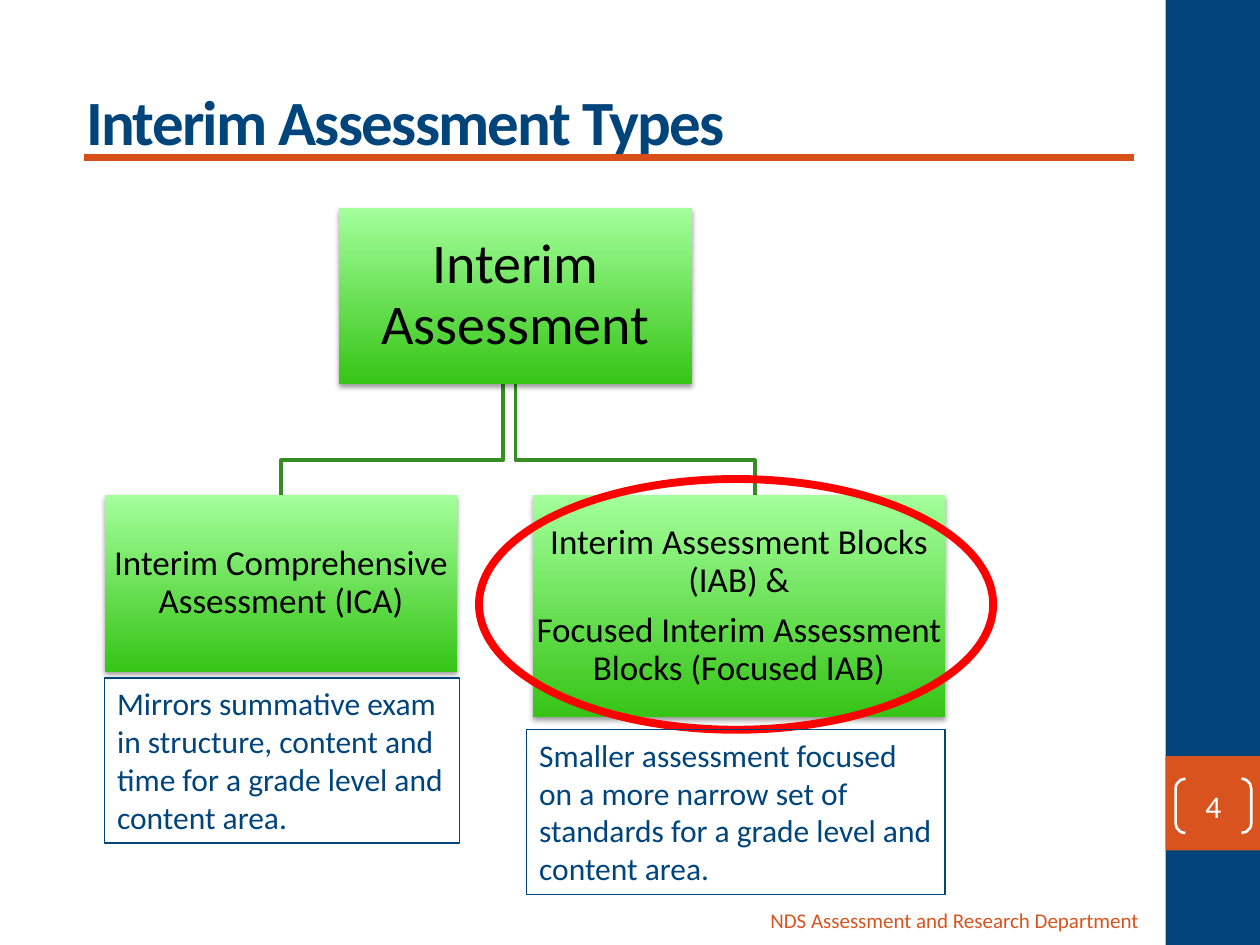
import pptx
import pptx.util
import pptx.dml.color
import pptx.oxml
import pptx.oxml.ns
import pptx.enum.shapes
import pptx.enum.text

Pt = pptx.util.Pt
SHAPE = pptx.enum.shapes.MSO_SHAPE
ALIGN = pptx.enum.text.PP_ALIGN
ANCHOR = pptx.enum.text.MSO_ANCHOR
NAVY, ORANGE, RED, WHITE, BLACK = "00447C", "D9531E", "FF0000", "FFFFFF", "000000"
GREEN_DARK, GREEN_LIGHT, GREEN_LINE = "36C416", "A3FF9B", "368D22"


def rgb(value):
    """Return the colour for a hex string."""
    return pptx.dml.color.RGBColor.from_string(value)


def set_attrs(obj, values):
    """Set each attribute named in a dict of format values."""
    for name, value in values.items():
        setattr(obj, name, value)


def set_line(sp, color, width):
    """Give a shape or connector a solid line."""
    sp.line.color.rgb = rgb(color)
    sp.line.width = Pt(width)


def set_text(sp, lines, size, color, align=ALIGN.LEFT, anchor=ANCHOR.TOP, inset=None, bold=False, para=None):
    """Write paragraphs into a shape and format them."""
    tf = sp.text_frame
    set_attrs(tf, {"word_wrap": True, "vertical_anchor": anchor})
    if inset is not None:
        set_attrs(tf, {f"margin_{side}": Pt(inset) for side in ("left", "top", "right", "bottom")})
    tf.text = "\n".join(lines)
    for p in tf.paragraphs:
        set_attrs(p, {"alignment": align, **(para or {})})
        for r in p.runs:
            set_attrs(r.font, {"name": "Calibri", "size": Pt(size), "bold": bold})
            r.font.color.rgb = rgb(color)


def add_shape(s, kind, box, fill=None):
    """Add a preset shape with a plain fill or none, and no line or shadow."""
    sp = s.shapes.add_shape(kind, *map(Pt, box))
    sp.shadow.inherit = False
    sp.line.fill.background()
    if fill:
        sp.fill.solid()
        sp.fill.fore_color.rgb = rgb(fill)
    else:
        sp.fill.background()
    return sp


def add_sidebar(s, box, number):
    """Draw the side band with its bracketed page number."""
    x, y, w, h = box
    tile_y = y + 0.8 * h
    bracket_w, bracket_h = 0.8 * w, 31
    add_shape(s, SHAPE.RECTANGLE, box, NAVY)
    add_shape(s, SHAPE.RECTANGLE, (x, tile_y, w, w), ORANGE)
    sp = add_shape(s, SHAPE.DOUBLE_BRACKET, (x + 5.8, tile_y + 13, bracket_w, bracket_h))
    sp.adjustments[0] = 0.18
    set_line(sp, WHITE, 1.5)
    set_text(sp, [number], 18, WHITE, ALIGN.CENTER, ANCHOR.MIDDLE, 0)


def add_title(s, box, text):
    """Place the title and the rule beneath it."""
    x, y, w, h = box
    sp = s.shapes.title
    set_attrs(sp, dict(zip(("left", "top", "width", "height"), map(Pt, box))))
    set_text(sp, [text], 36, NAVY, anchor=ANCHOR.BOTTOM, bold=True)
    sp.text_frame.paragraphs[0].runs[0].font._element.set("spc", "-100")
    rule_x, rule_y, rule_w = x + 6, y + h - 4, 600
    rule = s.shapes.add_connector(
        pptx.enum.shapes.MSO_CONNECTOR.STRAIGHT, Pt(rule_x), Pt(rule_y), Pt(rule_x + rule_w), Pt(rule_y))
    set_line(rule, "D94F19", 4.5)
    rule._element.spPr.append(pptx.oxml.parse_xml(f'<a:effectLst {pptx.oxml.ns.nsdecls("a")}/>'))


def add_footer(s, box, text):
    """Place the department name at the bottom right."""
    sp = s.shapes.add_textbox(*map(Pt, box))
    set_text(sp, [text], 12, ORANGE, ALIGN.RIGHT, ANCHOR.MIDDLE)


def add_branch(s, start_x, end_x, top, bend, bottom):
    """Draw an elbow line from the parent box to a child box."""
    builder = s.shapes.build_freeform(Pt(start_x), Pt(top))
    points = [(start_x, bend), (end_x, bend), (end_x, bottom)]
    builder.add_line_segments([(Pt(x), Pt(y)) for x, y in points], close=False)
    sp = builder.convert_to_shape()
    sp.shadow.inherit = False
    sp.fill.background()
    set_line(sp, GREEN_LINE, 2)


def add_node(s, box, lines, size):
    """Draw a green gradient box with a soft shadow and centred text."""
    sp = add_shape(s, SHAPE.RECTANGLE, box)
    sp.fill.gradient()
    sp.fill.gradient_angle = 90
    for stop, color in zip(sp.fill.gradient_stops, (GREEN_DARK, GREEN_LIGHT)):
        stop.color.rgb = rgb(color)
    effects = sp._element.spPr.find(pptx.oxml.ns.qn("a:effectLst"))
    effects.append(pptx.oxml.parse_xml(
        f'<a:outerShdw {pptx.oxml.ns.nsdecls("a")} blurRad="{Pt(3.1)}" dist="{Pt(1.6)}" dir="5400000" '
        'rotWithShape="0"><a:srgbClr val="000000"><a:alpha val="38000"/></a:srgbClr></a:outerShdw>'))
    set_text(sp, lines, size, BLACK, ALIGN.CENTER, ANCHOR.MIDDLE, 1,
             para={"line_spacing": 0.9, "space_after": Pt(0.35 * size)})


def add_note(s, box, text):
    """Draw an outlined description box."""
    sp = add_shape(s, SHAPE.RECTANGLE, box)
    set_line(sp, NAVY, 0.75)
    set_text(sp, [text], 18, NAVY)


def add_tree(s, box):
    """Draw the assessment hierarchy with its descriptions and highlight."""
    x, y, w, h = box
    node_w, node_h, note_h = 201.6, 100.8, 94.3
    right_w, right_h = 235.4, 126.7
    right_x, root_x = x + w - right_w, x + 134
    root_bottom, child_y = y + node_h, y + 164.2
    bend = child_y - 20
    root_mid = root_x + node_w / 2
    add_branch(s, root_mid, right_x + 126.8, root_bottom, bend, child_y + 2)
    add_branch(s, root_mid - 7, x + node_w / 2, root_bottom, bend, child_y + 2)
    add_node(s, (root_x, y, node_w, node_h), ["Interim Assessment"], 32)
    add_node(s, (x, child_y, node_w, node_h), ["Interim Comprehensive Assessment (ICA)"], 20)
    add_node(s, (right_x, child_y, right_w, right_h),
             ["Interim Assessment Blocks (IAB) &", "Focused Interim Assessment Blocks (Focused IAB)"], 20)
    ring_w, ring_h = 293.8, 143.3
    ring_x, ring_y = right_x + (right_w - ring_w) / 2 - 1.7, child_y + (right_h - ring_h) / 2 - 1
    set_line(add_shape(s, SHAPE.OVAL, (ring_x, ring_y, ring_w, ring_h)), RED, 4.5)
    add_note(s, (x, child_y + node_h + 3.6, node_w + 1.4, note_h),
             "Mirrors summative exam in structure, content and time for a grade level and content area.")
    add_note(s, (right_x - 3.6, y + h - note_h, right_w + 3.6, note_h),
             "Smaller assessment focused on a more narrow set of standards for a grade level and content area.")


def main():
    """Build the slide and save it."""
    prs = pptx.Presentation()
    set_attrs(prs, {"slide_width": Pt(720), "slide_height": Pt(540)})
    s = prs.slides.add_slide(prs.slide_layouts[5])
    add_sidebar(s, (666, 0, 54, 540), "4")
    add_title(s, (42, 21.6, 660, 72.4), "Interim Assessment Types")
    add_footer(s, (378, 511.2, 280, 28.8), "NDS Assessment and Research Department")
    add_tree(s, (59.8, 118.8, 480.2, 392.4))
    prs.save("out.pptx")


if __name__ == "__main__":
    main()
